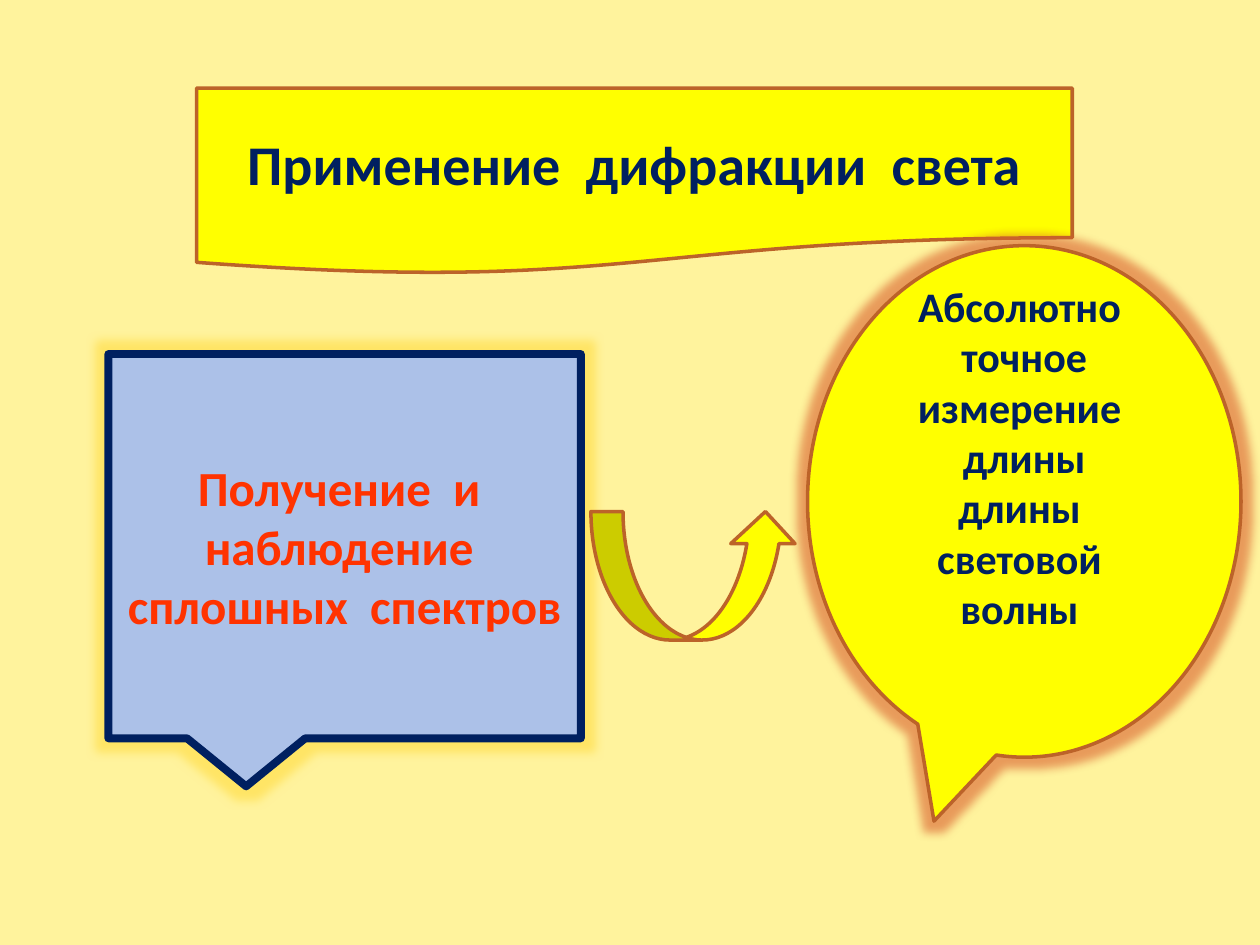
from lxml import etree
from pptx import Presentation
from pptx import util as u
from pptx.dml.color import RGBColor
from pptx.enum import shapes, text
from pptx.oxml.ns import qn

CREAM = RGBColor(0xFF, 0xF3, 0x9D)
YELLOW = RGBColor(0xFF, 0xFF, 0x00)
BROWN = RGBColor(0xBC, 0x63, 0x29)
NAVY = RGBColor(0x00, 0x20, 0x60)
LIGHT_BLUE = RGBColor(0xAC, 0xC1, 0xE8)
RED = RGBColor(0xFF, 0x33, 0x00)
GOLD_GLOW = RGBColor(0xFF, 0xDC, 0x41)
ORANGE_GLOW = RGBColor(0xDA, 0x61, 0x2F)


def add_figure(kind, place, fill=YELLOW, line=BROWN, width=2, glow=None):
    figure = page.shapes.add_shape(kind, *map(u.Inches, place))
    figure.shadow.inherit = False
    figure.fill.solid()
    figure.fill.fore_color.rgb = fill
    figure.line.color.rgb = line
    figure.line.width = u.Pt(width)
    if glow is not None:
        effects = figure._element.spPr.find(qn("a:effectLst"))
        halo = etree.SubElement(effects, qn("a:glow"), rad=str(u.Pt(11)))
        color = etree.SubElement(halo, qn("a:srgbClr"), val=str(glow))
        etree.SubElement(color, qn("a:alpha"), val="60000")
    return figure


def write(figure, lines, size, color):
    frame = figure.text_frame
    frame.word_wrap = True
    frame.vertical_anchor = text.MSO_ANCHOR.MIDDLE
    frame.text = "\n".join(lines)
    for para in frame.paragraphs:
        para.alignment = text.PP_ALIGN.CENTER
        for span in para.runs:
            span.font.name = "Calibri"
            span.font.size = u.Pt(size)
            span.font.bold = True
            span.font.color.rgb = color


deck = Presentation()
deck.slide_width = u.Inches(10)
deck.slide_height = u.Inches(7.5)
page = deck.slides.add_slide(deck.slide_layouts[6])
page.background.fill.solid()
page.background.fill.fore_color.rgb = CREAM

kinds = shapes.MSO_SHAPE
title = add_figure(kinds.FLOWCHART_DOCUMENT, (1.56, 0.7, 6.95, 1.48))
write(title, ["Применение  дифракции  света"], 32, NAVY)

spectra = add_figure(kinds.RECTANGULAR_CALLOUT, (0.86, 2.81, 3.75, 3.05),
                     LIGHT_BLUE, NAVY, 4.5, GOLD_GLOW)
write(spectra, ["Получение  и  наблюдение  сплошных  спектров"], 28, RED)

add_figure(kinds.CURVED_UP_ARROW, (4.69, 4.06, 1.64, 1.02))

wavelength = add_figure(kinds.OVAL_CALLOUT, (6.41, 1.95, 3.44, 4.06), glow=ORANGE_GLOW)
write(wavelength, ["Абсолютно  точное", "измерение  длины",
                   "длины  световой ", "волны "], 24, NAVY)
wavelength.text_frame.margin_bottom = u.Inches(0.76)

deck.save("out.pptx")
